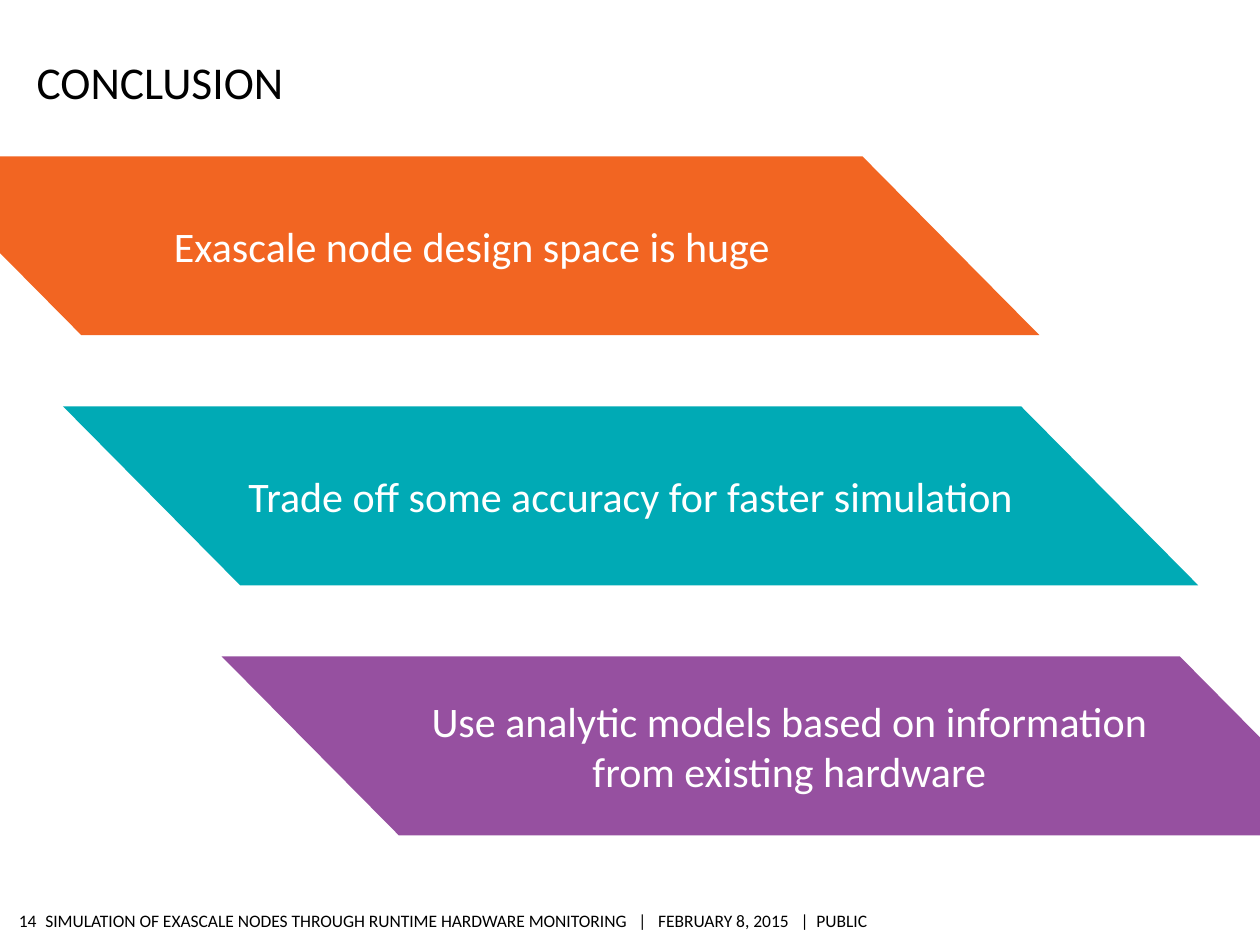
from pptx import Presentation
from pptx.dml.color import RGBColor
from pptx.enum.shapes import MSO_SHAPE
from pptx.enum.text import MSO_ANCHOR, PP_ALIGN
from pptx.util import Inches, Pt

PARALLELOGRAM = MSO_SHAPE.PARALLELOGRAM
LEFT, CENTER, RIGHT = PP_ALIGN.LEFT, PP_ALIGN.CENTER, PP_ALIGN.RIGHT
MIDDLE, BOTTOM = MSO_ANCHOR.MIDDLE, MSO_ANCHOR.BOTTOM

SLIDE_WIDTH, SLIDE_HEIGHT = 10, 7.5
TITLE_ONLY = 5
FONT = "Calibri"
BLACK, WHITE = "000000", "FFFFFF"
BAND_WIDTH, BAND_HEIGHT, BAND_SLANT = 9.01, 1.42, 0.99
CONCLUSIONS = [
    ("Exascale node design space is huge", "F26522"),
    ("Trade off some accuracy for faster simulation", "00AAB5"),
    ("Use analytic models based on information from existing hardware", "9650A0"),
]
FOOTER = ("SIMULATION OF EXASCALE NODES THROUGH RUNTIME HARDWARE MONITORING"
          "   |   FEBRUARY 8, 2015   |  PUBLIC")


def color(hex_value):
    """Return the colour for a hex string."""
    return RGBColor.from_string(hex_value)


def write(holder, text, size=24, ink=BLACK, align=LEFT, anchor=MIDDLE,
          insets=(0.1, 0.05, 0.1, 0.05)):
    """Put formatted text into a shape, text box or placeholder."""
    frame = holder.text_frame
    frame.word_wrap = True
    frame.vertical_anchor = anchor
    (frame.margin_left, frame.margin_top,
     frame.margin_right, frame.margin_bottom) = map(Inches, insets)
    paragraph = frame.paragraphs[0]
    paragraph.alignment = align
    run = paragraph.add_run()
    run.text = text
    run.font.name = FONT
    run.font.size = Pt(size)
    run.font.color.rgb = color(ink)


def place_title(slide, left, top, width, height):
    """Place the slide title in the given box."""
    title = slide.shapes.title
    title.left, title.top = Inches(left), Inches(top)
    title.width, title.height = Inches(width), Inches(height)
    write(title, "CONCLUSION", size=26, anchor=BOTTOM, insets=(0, 0.05, 0, 0))


def place_bands(slide, left, top, width, height):
    """Step the conclusion bands evenly from one corner of the box to the other."""
    steps = len(CONCLUSIONS) - 1
    step_right = (width - BAND_WIDTH) / steps
    step_down = (height - BAND_HEIGHT) / steps
    for index, (conclusion, fill) in enumerate(CONCLUSIONS):
        band = slide.shapes.add_shape(
            PARALLELOGRAM,
            Inches(left + index * step_right), Inches(top + index * step_down),
            Inches(BAND_WIDTH), Inches(BAND_HEIGHT))
        band.adjustments[0] = BAND_SLANT
        band._element.spPr.get_or_add_xfrm().set("flipH", "1")
        band.shadow.inherit = False
        band.fill.solid()
        band.fill.fore_color.rgb = color(fill)
        band.line.fill.background()
        write(band, conclusion, ink=WHITE, align=CENTER)


def place_footer(slide, left, top, width, height, number_width=0.16, gap=0.07):
    """Place the page number and the running footer side by side in the box."""
    footer_left = left + number_width + gap
    parts = [("14", left, number_width, RIGHT),
             (FOOTER, footer_left, left + width - footer_left, LEFT)]
    for text, part_left, part_width, align in parts:
        label = slide.shapes.add_textbox(
            Inches(part_left), Inches(top), Inches(part_width), Inches(height))
        write(label, text, size=10, align=align, insets=(0, 0.04, 0, 0.04))


def main():
    """Build and save the conclusion slide."""
    deck = Presentation()
    deck.slide_width, deck.slide_height = Inches(SLIDE_WIDTH), Inches(SLIDE_HEIGHT)
    slide = deck.slides.add_slide(deck.slide_layouts[TITLE_ONLY])
    place_footer(slide, 0.13, 7.18, 7.02, 0.26)
    place_title(slide, 0.29, 0.34, 0.84 * SLIDE_WIDTH, 0.07 * SLIDE_HEIGHT)
    place_bands(slide, -0.76, 1.24, 11.53, 5.39)
    deck.save("out.pptx")


if __name__ == "__main__":
    main()
